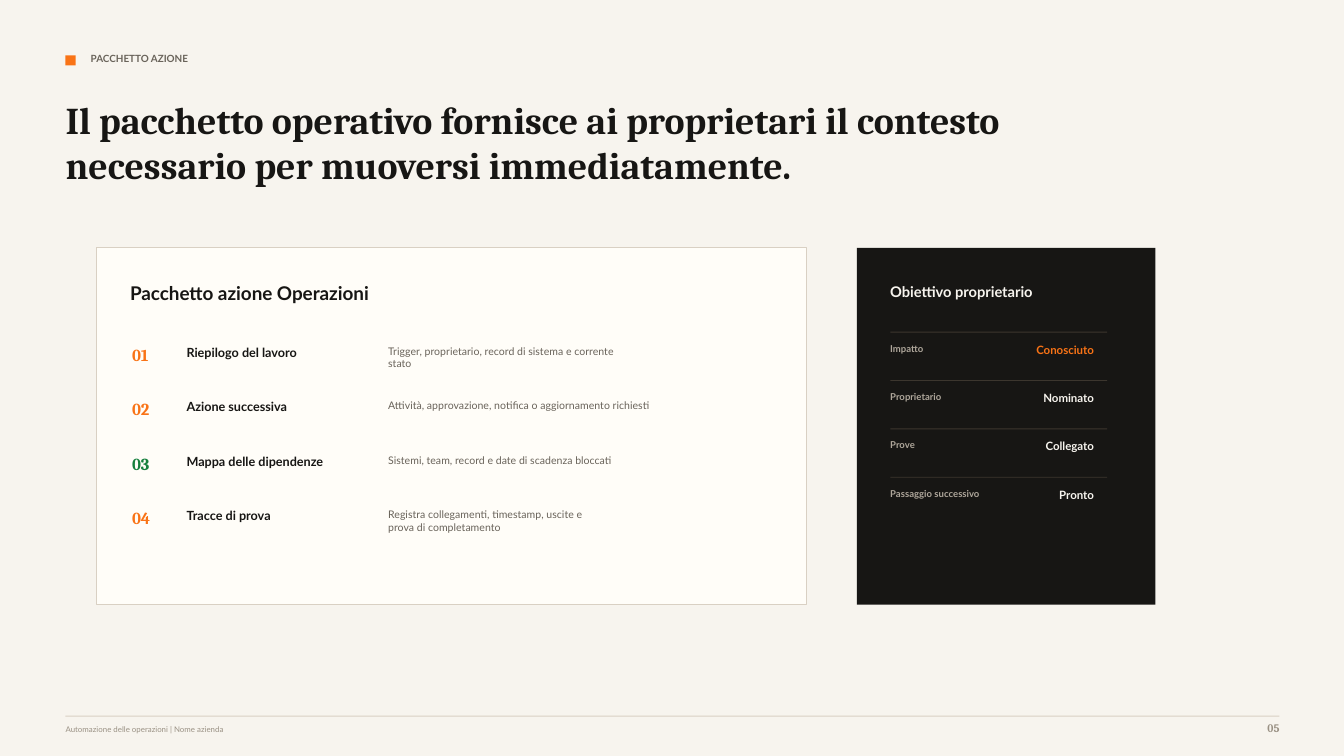
from dataclasses import dataclass

from pptx import Presentation
from pptx.dml.color import RGBColor
from pptx.enum.shapes import MSO_SHAPE as Shape
from pptx.enum.text import MSO_ANCHOR as Anchor, PP_ALIGN as Align
from pptx.util import Pt

EMU_PER_PX = 9144


@dataclass(frozen=True)
class Theme:
    serif: str = "Cambria"
    sans: str = "Lato"
    paper: str = "F7F4EE"
    card: str = "FFFDF8"
    ink: str = "171614"
    muted: str = "69635A"
    faint: str = "9A9184"
    label: str = "AFA79B"
    border: str = "D9D0C3"
    dark_rule: str = "3C362E"
    orange: str = "F97316"
    green: str = "15803D"
    title_size: float = 27
    card_size: float = 13.5
    number_size: float = 12
    panel_size: float = 10.5
    step_size: float = 9
    value_size: float = 8.2
    detail_size: float = 7.5
    eyebrow_size: float = 7.1
    label_size: float = 6.8
    footer_size: float = 5.6


def px(length):
    return length * EMU_PER_PX


def write_text(text_frame, text, *, size, color, font, bold=False, align=Align.LEFT):
    for index, line in enumerate(text.split("\n")):
        paragraph = text_frame.add_paragraph() if index else text_frame.paragraphs[0]
        paragraph.alignment = align
        run = paragraph.add_run()
        run.text = line
        run.font.name = font
        run.font.size = Pt(size)
        run.font.bold = bold
        run.font.color.rgb = RGBColor.from_string(color)


class SlideBuilder:
    def __init__(self, slide, theme):
        self.slide = slide
        self.theme = theme

    def background(self, color):
        fill = self.slide.background.fill
        fill.solid()
        fill.fore_color.rgb = RGBColor.from_string(color)

    def box(self, left, top, width, height, fill, line=None):
        shape = self.slide.shapes.add_shape(
            Shape.RECTANGLE, px(left), px(top), px(width), px(height))
        shape.shadow.inherit = False
        shape.fill.solid()
        shape.fill.fore_color.rgb = RGBColor.from_string(fill)
        if line:
            shape.line.color.rgb = RGBColor.from_string(line)
            shape.line.width = Pt(0.75)
        else:
            shape.line.fill.background()

    def rule(self, left, top, width, color):
        self.box(left, top, width, 1, color)

    def text(self, left, top, width, height, text, *, font=None, **style):
        shape = self.slide.shapes.add_textbox(px(left), px(top), px(width), px(height))
        text_frame = shape.text_frame
        text_frame.word_wrap = True
        text_frame.vertical_anchor = Anchor.TOP
        text_frame.margin_left = text_frame.margin_right = 0
        text_frame.margin_top = text_frame.margin_bottom = 0
        write_text(text_frame, text, font=font or self.theme.sans, **style)

    def step(self, top, number, name, detail, color):
        theme = self.theme
        self.text(131, top, 35, 25, number, font=theme.serif,
                  size=theme.number_size, color=color, bold=True)
        self.text(185, top, 181, 19, name,
                  size=theme.step_size, color=theme.ink, bold=True)
        self.text(385, top, 333, 31, detail,
                  size=theme.detail_size, color=theme.muted)

    def metric(self, top, label, value, color):
        theme = self.theme
        self.rule(883, top, 215, theme.dark_rule)
        self.text(883, top + 11, 96, 17, label,
                  size=theme.label_size, color=theme.label, bold=True)
        self.text(1000, top + 11, 85, 17, value, size=theme.value_size,
                  color=color, bold=True, align=Align.RIGHT)


def main():
    theme = Theme()
    presentation = Presentation()
    presentation.slide_width = px(1333)
    presentation.slide_height = px(750)
    slide = presentation.slides.add_slide(presentation.slide_layouts[6])
    builder = SlideBuilder(slide, theme)

    builder.background(theme.paper)
    builder.box(65, 55, 10, 10, theme.orange)
    builder.text(90, 52, 646, 19, "PACCHETTO AZIONE",
                 size=theme.eyebrow_size, color=theme.muted, bold=True)
    builder.text(65, 96, 938, 102,
                 "Il pacchetto operativo fornisce ai proprietari il contesto "
                 "necessario per muoversi immediatamente.",
                 font=theme.serif, size=theme.title_size, color=theme.ink, bold=True)

    builder.box(96, 246, 704, 354, theme.card, line=theme.border)
    builder.text(129, 279, 312, 25, "Pacchetto azione Operazioni",
                 size=theme.card_size, color=theme.ink, bold=True)
    steps = [
        ("Riepilogo del lavoro",
         "Trigger, proprietario, record di sistema e corrente\nstato", theme.orange),
        ("Azione successiva",
         "Attività, approvazione, notifica o aggiornamento richiesti", theme.orange),
        ("Mappa delle dipendenze",
         "Sistemi, team, record e date di scadenza bloccati", theme.green),
        ("Tracce di prova",
         "Registra collegamenti, timestamp, uscite e\nprova di completamento",
         theme.orange),
    ]
    for index, (name, detail, color) in enumerate(steps):
        builder.step(342 + 54 * index, f"{index + 1:02}", name, detail, color)

    builder.box(850, 246, 296, 354, theme.ink)
    builder.text(883, 281, 167, 21, "Obiettivo proprietario",
                 size=theme.panel_size, color=theme.paper, bold=True)
    metrics = [
        ("Impatto", "Conosciuto", theme.orange),
        ("Proprietario", "Nominato", theme.paper),
        ("Prove", "Collegato", theme.paper),
        ("Passaggio successivo", "Pronto", theme.paper),
    ]
    for index, (label, value, color) in enumerate(metrics):
        builder.metric(329 + 48 * index, label, value, color)

    builder.rule(65, 710, 1204, theme.border)
    builder.text(65, 719, 792, 15, "Automazione delle operazioni | Nome azienda",
                 size=theme.footer_size, color=theme.faint)
    builder.text(1219, 715, 50, 19, "05", font=theme.serif, size=theme.value_size,
                 color=theme.faint, bold=True, align=Align.RIGHT)

    presentation.save("out.pptx")


if __name__ == "__main__":
    main()
